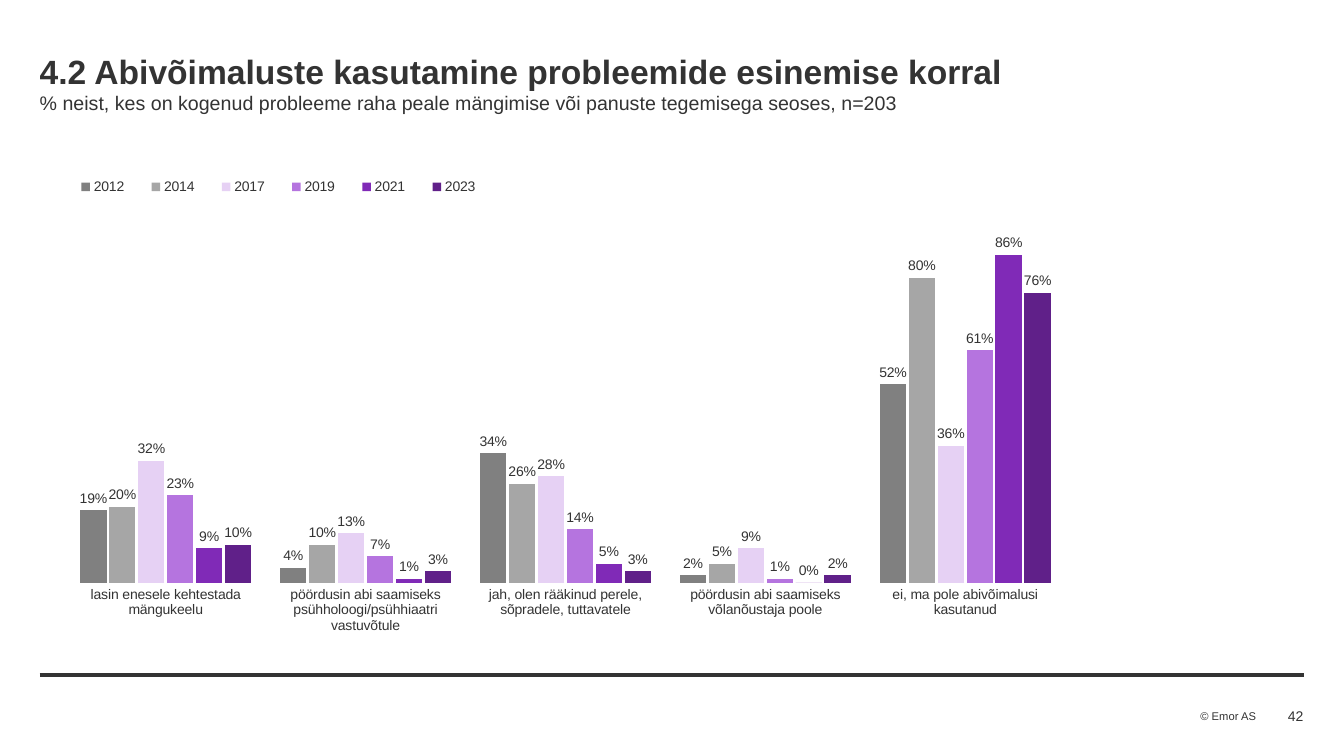
from lxml import etree
from pptx import Presentation
from pptx.chart.data import CategoryChartData
from pptx.dml.color import RGBColor
from pptx.enum.chart import (XL_CHART_TYPE, XL_LABEL_POSITION, XL_LEGEND_POSITION,
                             XL_TICK_LABEL_POSITION, XL_TICK_MARK)
from pptx.enum.shapes import MSO_CONNECTOR
from pptx.enum.text import MSO_ANCHOR, MSO_AUTO_SIZE, PP_ALIGN
from pptx.oxml.ns import qn
from pptx.util import Cm, Pt

CLUSTERED = XL_CHART_TYPE.COLUMN_CLUSTERED
OUTSIDE_END = XL_LABEL_POSITION.OUTSIDE_END
LEGEND_RIGHT = XL_LEGEND_POSITION.RIGHT
NO_TICK_LABELS = XL_TICK_LABEL_POSITION.NONE
NO_TICK = XL_TICK_MARK.NONE
STRAIGHT = MSO_CONNECTOR.STRAIGHT
TOP, MIDDLE = MSO_ANCHOR.TOP, MSO_ANCHOR.MIDDLE
LEFT, RIGHT = PP_ALIGN.LEFT, PP_ALIGN.RIGHT
FIXED_SIZE = MSO_AUTO_SIZE.NONE

CATEGORIES = [
    "lasin enesele kehtestada mängukeelu",
    "pöördusin abi saamiseks psühholoogi/psühhiaatri vastuvõtule",
    "jah, olen rääkinud perele, sõpradele, tuttavatele",
    "pöördusin abi saamiseks võlanõustaja poole",
    "ei, ma pole abivõimalusi kasutanud",
]
YEARS = [
    ("2012", (19, 4, 34, 2, 52), "808080"),
    ("2014", (20, 10, 26, 5, 80), "A6A6A6"),
    ("2017", (32, 13, 28, 9, 36), "E6D1F4"),
    ("2019", (23, 7, 14, 1, 61), "B574DF"),
    ("2021", (9, 1, 5, 0, 86), "802AB7"),
    ("2023", (10, 3, 3, 2, 76), "602089"),
]


def rgb(hex_color):
    return RGBColor.from_string(hex_color)


def set_layout(parent, index, box, inner=False):
    """Fix a chart part at box: left, top, width, height as chart fractions."""
    for old in parent.findall(qn("c:layout")):
        parent.remove(old)
    layout = etree.Element(qn("c:layout"))
    manual = etree.SubElement(layout, qn("c:manualLayout"))
    settings = [("layoutTarget", "inner")] if inner else []
    settings += [("xMode", "edge"), ("yMode", "edge")]
    settings += zip("xywh", map(str, box))
    for tag, value in settings:
        etree.SubElement(manual, qn(f"c:{tag}")).set("val", value)
    parent.insert(index, layout)


class SlideBuilder:
    font_name = "Arial"
    ink = "333333"

    def __init__(self, slide):
        self.slide = slide

    def style(self, font, size, bold=False):
        font.name = self.font_name
        font.size = Pt(size)
        font.bold = bold
        font.color.rgb = rgb(self.ink)

    def frame(self, shape, anchor, wrap=True):
        """Strip the margins of a shape's text frame and return the frame."""
        frame = shape.text_frame
        frame.margin_left = frame.margin_right = 0
        frame.margin_top = frame.margin_bottom = 0
        frame.vertical_anchor = anchor
        frame.auto_size = FIXED_SIZE
        frame.word_wrap = wrap
        return frame

    def title(self, box, heading, base):
        title = self.slide.shapes.title
        title.left, title.top, title.width, title.height = map(Cm, box)
        frame = self.frame(title, TOP)
        frame.text = f"{heading}\v{base}"
        paragraph = frame.paragraphs[0]
        paragraph.alignment = LEFT
        paragraph.space_before = Pt(0)
        heading_run, base_run = paragraph.runs
        self.style(heading_run.font, 24, bold=True)
        self.style(base_run.font, 14)

    def text(self, box, words, size, align=LEFT, anchor=TOP, wrap=True):
        frame = self.frame(self.slide.shapes.add_textbox(*map(Cm, box)), anchor, wrap)
        frame.text = words
        frame.paragraphs[0].alignment = align
        self.style(frame.paragraphs[0].runs[0].font, size)

    def rule(self, left, right, y, weight):
        rule = self.slide.shapes.add_connector(STRAIGHT, Cm(left), Cm(y), Cm(right), Cm(y))
        rule.line.color.rgb = rgb(self.ink)
        rule.line.width = Pt(weight)
        etree.SubElement(rule._element.spPr, qn("a:effectLst"))

    def column_chart(self, box, categories, groups):
        data = CategoryChartData(number_format="0")
        data.categories = categories
        for name, values, _ in groups:
            data.add_series(name, values)
        chart = self.slide.shapes.add_chart(CLUSTERED, *map(Cm, box), data).chart
        chart.has_title = False
        self.style(chart.font, 10)

        for axis in (chart.category_axis, chart.value_axis):
            axis.has_major_gridlines = False
            axis.major_tick_mark = axis.minor_tick_mark = NO_TICK
            axis.format.line.fill.background()
        chart.value_axis.tick_label_position = NO_TICK_LABELS
        chart.value_axis.minimum_scale = 0
        chart.value_axis.maximum_scale = 100

        plot = chart.plots[0]
        plot.gap_width = 110
        plot.overlap = -10
        plot.vary_by_categories = False
        for series, (_, _, color) in zip(plot.series, groups):
            series.format.fill.solid()
            series.format.fill.fore_color.rgb = rgb(color)
            labels = series.data_labels
            labels.show_value = True
            labels.number_format = r"0\%"
            labels.number_format_is_linked = False
            labels.position = OUTSIDE_END
            self.style(labels.font, 10)

        chart.has_legend = True
        legend = chart.legend
        legend.position = LEGEND_RIGHT
        legend.include_in_layout = False
        self.style(legend.font, 10)
        set_layout(legend._element, 1, (0.01, 0.03, 0.43, 0.05))
        plot_area = chart._chartSpace.chart.plotArea
        set_layout(plot_area, 0, (0.017, 0.086, 0.977, 0.813), inner=True)


def main():
    deck = Presentation()
    deck.slide_width, deck.slide_height = Cm(33.87), Cm(19.05)
    builder = SlideBuilder(deck.slides.add_slide(deck.slide_layouts[5]))
    builder.rule(1, 32.87, 17, 3)
    builder.text((30.25, 17.88, 1.42, 0.33), "© Emor AS", 8, wrap=False)
    builder.title(
        (1, 1.28, 31.85, 1.12),
        "4.2 Abivõimaluste kasutamine probleemide esinemise korral",
        "% neist, kes on kogenud probleeme raha peale mängimise "
        "või panuste tegemisega seoses, n=203",
    )
    builder.text((30.15, 17.75, 2.7, 0.56), "42", 10, RIGHT, MIDDLE)
    builder.column_chart((1.22, 4.06, 25.78, 11.91), CATEGORIES, YEARS)
    deck.save("out.pptx")


if __name__ == "__main__":
    main()
